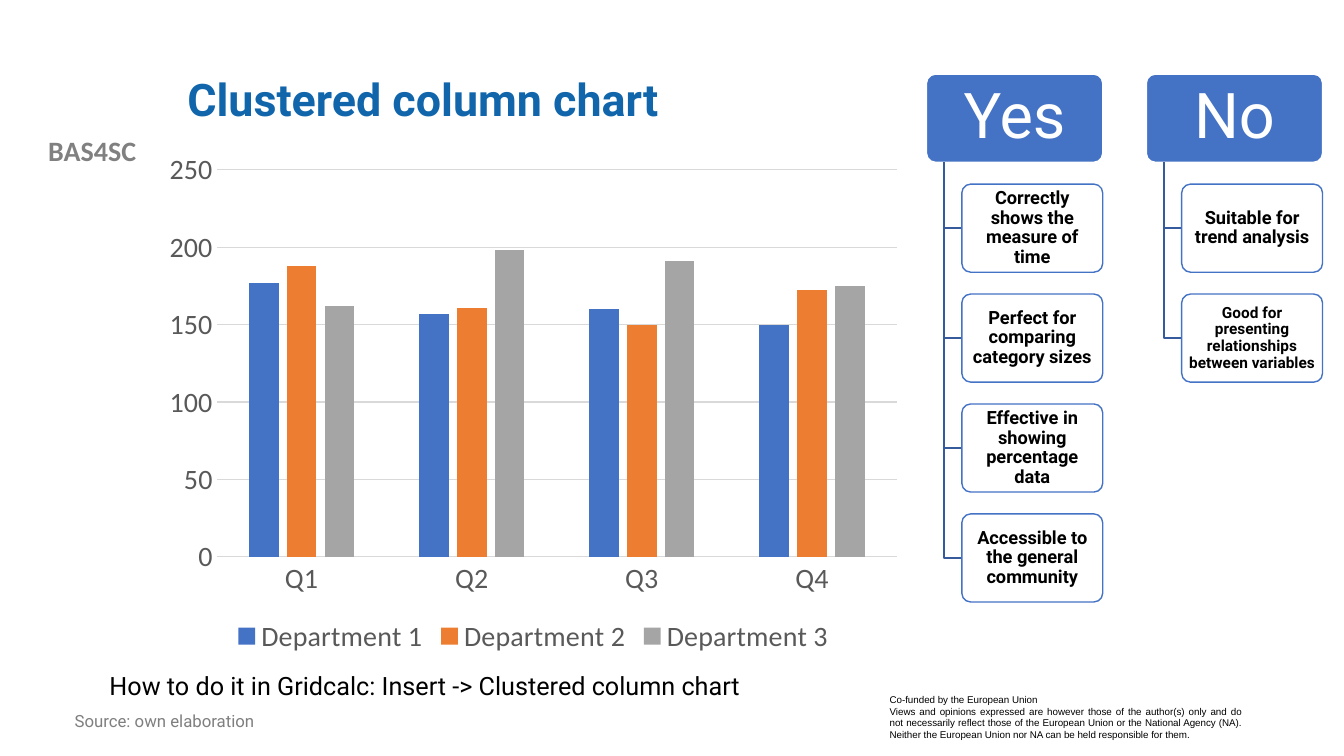
"""Build a slide on the clustered column chart with its pros and cons."""
from lxml.etree import SubElement
from pptx import Presentation
from pptx.chart.data import CategoryChartData
from pptx.dml.color import RGBColor
from pptx.enum.chart import XL_CHART_TYPE, XL_LEGEND_POSITION, XL_TICK_MARK
from pptx.enum.shapes import MSO_SHAPE
from pptx.enum.text import MSO_ANCHOR, PP_ALIGN
from pptx.oxml.ns import qn
from pptx.util import Cm, Pt

HUES = {
    "white": "FFFFFF", "black": "000000", "title": "1065AB",
    "gray": "808080", "source": "7F7F7F", "label": "595959",
    "grid": "D9D9D9", "elbow": "365B9D",
    "blue": "4472C4", "orange": "ED7D31", "silver": "A5A5A5",
}
QUARTERS = ["Q1", "Q2", "Q3", "Q4"]
TEAMS = [
    ("Department 1", [177, 157, 160, 150], "blue"),
    ("Department 2", [188, 161, 150, 172], "orange"),
    ("Department 3", [162, 198, 191, 175], "silver"),
]
LISTS = [
    ("Yes", [
        ("Correctly shows the measure of time", 13),
        ("Perfect for comparing category sizes", 13),
        ("Effective in showing percentage data", 13),
        ("Accessible to the general community", 13),
    ]),
    ("No", [
        ("Suitable for trend analysis", 13),
        ("Good for presenting relationships between variables", 11),
    ]),
]
NOTICE = (
    "Co-funded by the European Union\n"
    "Views and opinions expressed are however those of the author(s) only "
    "and do not necessarily reflect those of the European Union or the "
    "National Agency (NA). Neither the European Union nor NA can be held "
    "responsible for them."
)
LEFT, TOP, HIGH = 23.35, 1.87, 2.22
HEAD_W, CARD_W = 4.44, 3.55
LIST_GAP, CARD_GAP = 5.54, 2.77


def color(name):
    return RGBColor.from_string(HUES[name])


def style(font, size, hue, face="Roboto", bold=False):
    font.size = Pt(size)
    font.name = face
    font.bold = bold
    font.color.rgb = color(hue)


def write(frame, text, size, hue, face="Roboto", bold=False,
          align=PP_ALIGN.LEFT, space=1.0):
    frame.word_wrap = True
    frame.text = text
    for para in frame.paragraphs:
        para.alignment = align
        para.line_spacing = space
        for run in para.runs:
            style(run.font, size, hue, face, bold)


def add_text(slide, box, text, size, hue, anchor=MSO_ANCHOR.TOP, **looks):
    shape = slide.shapes.add_textbox(*map(Cm, box))
    shape.text_frame.vertical_anchor = anchor
    write(shape.text_frame, text, size, hue, **looks)
    return shape


def add_card(slide, box, text, size, fill, edge, ink, pad, bold):
    card = slide.shapes.add_shape(MSO_SHAPE.ROUNDED_RECTANGLE, *map(Cm, box))
    card.adjustments[0] = 0.1
    card.shadow.inherit = False
    card.fill.solid()
    card.fill.fore_color.rgb = color(fill)
    card.line.color.rgb = color(edge)
    card.line.width = Pt(1)
    frame = card.text_frame
    frame.vertical_anchor = MSO_ANCHOR.MIDDLE
    frame.margin_left = frame.margin_right = Cm(pad)
    frame.margin_top = frame.margin_bottom = Cm(pad * 0.67)
    write(frame, text, size, ink, bold=bold, align=PP_ALIGN.CENTER, space=0.9)
    return card


def add_elbow(slide, x, top, end_x, end_y):
    pen = slide.shapes.build_freeform(Cm(x), Cm(top))
    pen.add_line_segments([(Cm(x), Cm(end_y)), (Cm(end_x), Cm(end_y))],
                          close=False)
    elbow = pen.convert_to_shape()
    elbow.shadow.inherit = False
    elbow.fill.background()
    elbow.line.color.rgb = color("elbow")
    elbow.line.width = Pt(1)


def add_list(slide, left, head, items):
    add_card(slide, (left, TOP, HEAD_W, HIGH), head, 45,
             "blue", "white", "white", 0.23, False)
    card_x = left + HEAD_W - CARD_W
    for row, (text, size) in enumerate(items, 1):
        top = TOP + row * CARD_GAP
        add_elbow(slide, left + 0.44, TOP + HIGH, card_x, top + HIGH / 2)
        card = add_card(slide, (card_x, top, CARD_W, HIGH), text, size,
                        "white", "blue", "black", 0.07, True)
        tint = card.fill._xPr.find(qn("a:solidFill"))[0]
        SubElement(tint, qn("a:alpha"), val="90000")


def add_columns(slide, box):
    data = CategoryChartData()
    data.categories = QUARTERS
    for name, values, _ in TEAMS:
        data.add_series(name, values)
    chart = slide.shapes.add_chart(
        XL_CHART_TYPE.COLUMN_CLUSTERED, *map(Cm, box), data).chart
    style(chart.font, 20, "black", "Calibri")
    chart.has_title = False
    chart.has_legend = True
    chart.legend.position = XL_LEGEND_POSITION.BOTTOM
    chart.legend.include_in_layout = False
    style(chart.legend.font, 20, "label", "Calibri")

    plot = chart.plots[0]
    plot.gap_width = 219
    plot.overlap = -27
    plot.vary_by_categories = False
    for series, (_, _, hue) in zip(plot.series, TEAMS):
        series.format.fill.solid()
        series.format.fill.fore_color.rgb = color(hue)

    scale = chart.value_axis
    scale.minimum_scale, scale.maximum_scale, scale.major_unit = 0, 250, 50
    for axis in (chart.category_axis, scale):
        axis.major_tick_mark = axis.minor_tick_mark = XL_TICK_MARK.NONE
        style(axis.tick_labels.font, 20, "label", "Calibri")
    scale.format.line.fill.background()
    for part in (chart.category_axis, scale.major_gridlines):
        part.format.line.color.rgb = color("grid")
        part.format.line.width = Pt(0.75)


def main():
    deck = Presentation()
    deck.slide_width, deck.slide_height = Cm(33.87), Cm(19.05)
    slide = deck.slides.add_slide(deck.slide_layouts[6])
    add_text(slide, (0, 3.25, 4.65, 1.12), "BAS4SC", 20, "gray",
             face="Calibri", bold=True, align=PP_ALIGN.CENTER)
    notice = add_text(slide, (22.17, 17.35, 9.37, 1.45), NOTICE, 7, "black",
                      face="Arial", align=PP_ALIGN.JUSTIFY)
    notice.fill.solid()
    notice.fill.fore_color.rgb = color("white")
    add_text(slide, (4.47, 1.02, 27.08, 3.1), "Clustered column chart", 32,
             "title", MSO_ANCHOR.MIDDLE, bold=True, space=0.9)
    add_text(slide, (1.63, 17.83, 12.73, 0.86), "Source: own elaboration",
             12, "source", space=0.9)
    add_columns(slide, (3.89, 3.58, 19.1, 13.03))
    for col, (head, items) in enumerate(LISTS):
        add_list(slide, LEFT + col * LIST_GAP, head, items)
    add_text(slide, (2.51, 16.76, 20.02, 1.07),
             "How to do it in Gridcalc: Insert -> Clustered column chart",
             18, "black")
    deck.save("out.pptx")


if __name__ == "__main__":
    main()
